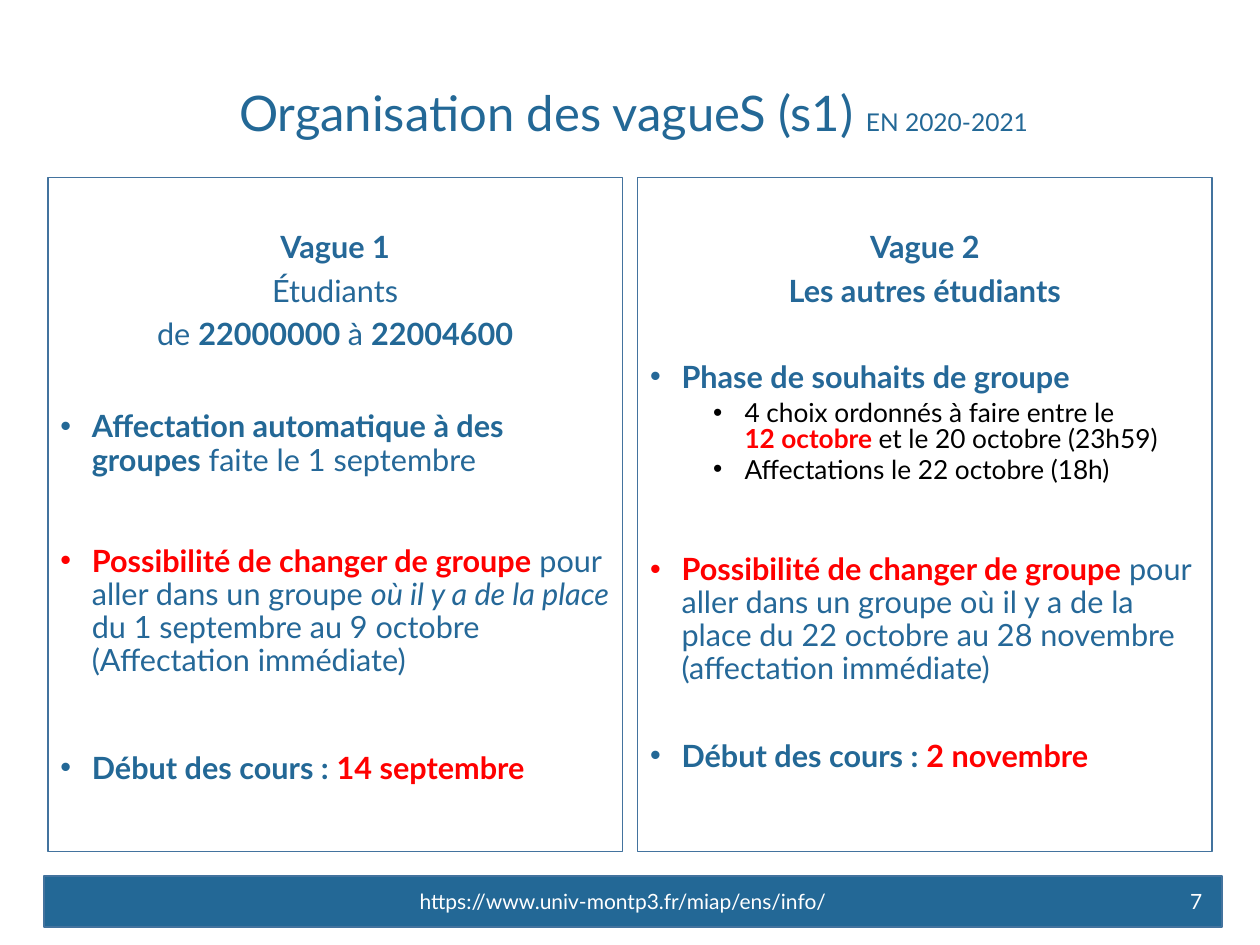
from lxml import etree
from pptx import Presentation
from pptx.dml.color import RGBColor
from pptx.enum import shapes, text
from pptx.oxml import ns
from pptx.util import Pt

COLORS = {
    "bar": "236896",
    "blue": "256898",
    "border": "43739E",
    "red": "FF0000",
    "black": "000000",
    "white": "FFFFFF",
}
FONT = "Lato"
LEFT, CENTER, RIGHT = text.PP_ALIGN.LEFT, text.PP_ALIGN.CENTER, text.PP_ALIGN.RIGHT


def color(name):
    return RGBColor.from_string(COLORS[name])


def write(paragraph, runs, size, align=LEFT):
    paragraph.alignment = align
    paragraph.font.name = FONT
    paragraph.font.size = Pt(size)
    for words, name, style in runs:
        for index, line in enumerate(words.split("\n")):
            if index:
                paragraph.add_line_break()
            if line:
                run = paragraph.add_run()
                run.text = line
                run.font.color.rgb = color(name)
                run.font.bold = "b" in style
                run.font.italic = "i" in style


presentation = Presentation()
presentation.slide_width, presentation.slide_height = Pt(720), Pt(540)
slide = presentation.slides.add_slide(presentation.slide_layouts[6])

footer_bar = slide.shapes.add_shape(
    shapes.MSO_SHAPE.RECTANGLE, Pt(25.2), Pt(500.4), Pt(673.2), Pt(29.5))
footer_bar.shadow.inherit = False
footer_bar.fill.solid()
footer_bar.fill.fore_color.rgb = color("bar")
footer_bar.line.color.rgb = color("border")
footer_bar.line.width = Pt(1)

labels = [
    (129.6, 31, 562.3, 70.5, "Organisation des vagueS (s1) ", 28, "bar", LEFT),
    (532.1, 500.4, 162, 28.8, "7", 12, "white", RIGHT),
    (230.4, 500.4, 251.3, 28.8, "https://www.univ-montp3.fr/miap/ens/info/", 12, "white", CENTER),
]
for left, top, width, height, words, size, name, align in labels:
    label = slide.shapes.add_textbox(Pt(left), Pt(top), Pt(width), Pt(height))
    frame = label.text_frame
    frame.word_wrap = True
    frame.vertical_anchor = text.MSO_ANCHOR.MIDDLE
    paragraph = frame.paragraphs[0]
    write(paragraph, [(words, name, "")], size, align)
    if size == 28:
        paragraph.line_spacing = 0.9
        year = paragraph.add_run()
        year.text = "EN 2020-2021"
        year.font.size = Pt(14)
        year.font.color.rgb = color(name)

LEVELS = {
    "heading": (17.5, CENTER, 0),
    "item": (17.5, LEFT, 18),
    "detail": (15, LEFT, 54),
}
change = ("Possibilité de changer de groupe ", "red", "b")
start = ("Début des cours : ", "bar", "b")
wave_1 = [
    ("heading", 1, 0, [("Vague 1", "blue", "b")]),
    ("heading", 0.7, 10, [("Étudiants", "blue", "")]),
    ("heading", 0.7, 10, [("de ", "blue", ""), ("22000000 ", "bar", "b"),
                          ("à ", "blue", ""), ("22004600", "bar", "b")]),
    ("item", 0.9, 34.7, [("Affectation automatique à des groupes ", "bar", "b"),
                         ("faite le 1 septembre", "blue", "")]),
    ("item", 0.9, 38.9, [change, ("pour aller dans un groupe ", "blue", ""),
                         ("où il y a de la place", "blue", "i"),
                         (" du 1 septembre au 9 octobre (Affectation immédiate)", "blue", "")]),
    ("item", 0.7, 46.5, [start, ("14 septembre", "red", "b")]),
]
wave_2 = [
    ("heading", 1, 0, [("Vague 2", "blue", "b")]),
    ("heading", 0.7, 10, [("Les autres étudiants", "blue", "b")]),
    ("item", 0.7, 34.7, [("Phase de souhaits de groupe", "blue", "b")]),
    ("detail", 0.8, 5, [("4 choix ordonnés à faire entre le\n", "black", ""),
                        ("12 octobre ", "red", "b"),
                        ("et le 20 octobre (23h59)", "black", "")]),
    ("detail", 0.7, 5, [("Affectations le 22 octobre (18h)", "black", "")]),
    ("item", 0.9, 40.2, [change, ("pour aller dans un groupe où il y a de la place "
                                  "du 22 octobre au 28 novembre\n(affectation immédiate)",
                                  "blue", "")]),
    ("item", 0.7, 34.7, [start, ("2 novembre", "red", "b")]),
]

for column, wave in enumerate((wave_1, wave_2)):
    panel = slide.shapes.add_shape(
        shapes.MSO_SHAPE.RECTANGLE, Pt(27.4 + 337 * column), Pt(101.5), Pt(328.3), Pt(385.2))
    panel.shadow.inherit = False
    panel.fill.background()
    panel.line.color.rgb = color("border")
    panel.line.width = Pt(0.75)
    frame = panel.text_frame
    frame.word_wrap = True
    frame.vertical_anchor = text.MSO_ANCHOR.TOP
    frame.margin_top = Pt(28.6)
    for index, (level, spacing, before, runs) in enumerate(wave):
        paragraph = frame.add_paragraph() if index else frame.paragraphs[0]
        size, align, indent = LEVELS[level]
        if indent:
            properties = paragraph._p.get_or_add_pPr()
            properties.set("marL", str(Pt(indent)))
            properties.set("indent", str(-Pt(18)))
            etree.SubElement(properties, ns.qn("a:buFont"), typeface="Arial")
            etree.SubElement(properties, ns.qn("a:buChar"), char="•")
        paragraph.line_spacing = spacing
        paragraph.space_before = Pt(before)
        write(paragraph, runs, size, align)

presentation.save("out.pptx")
